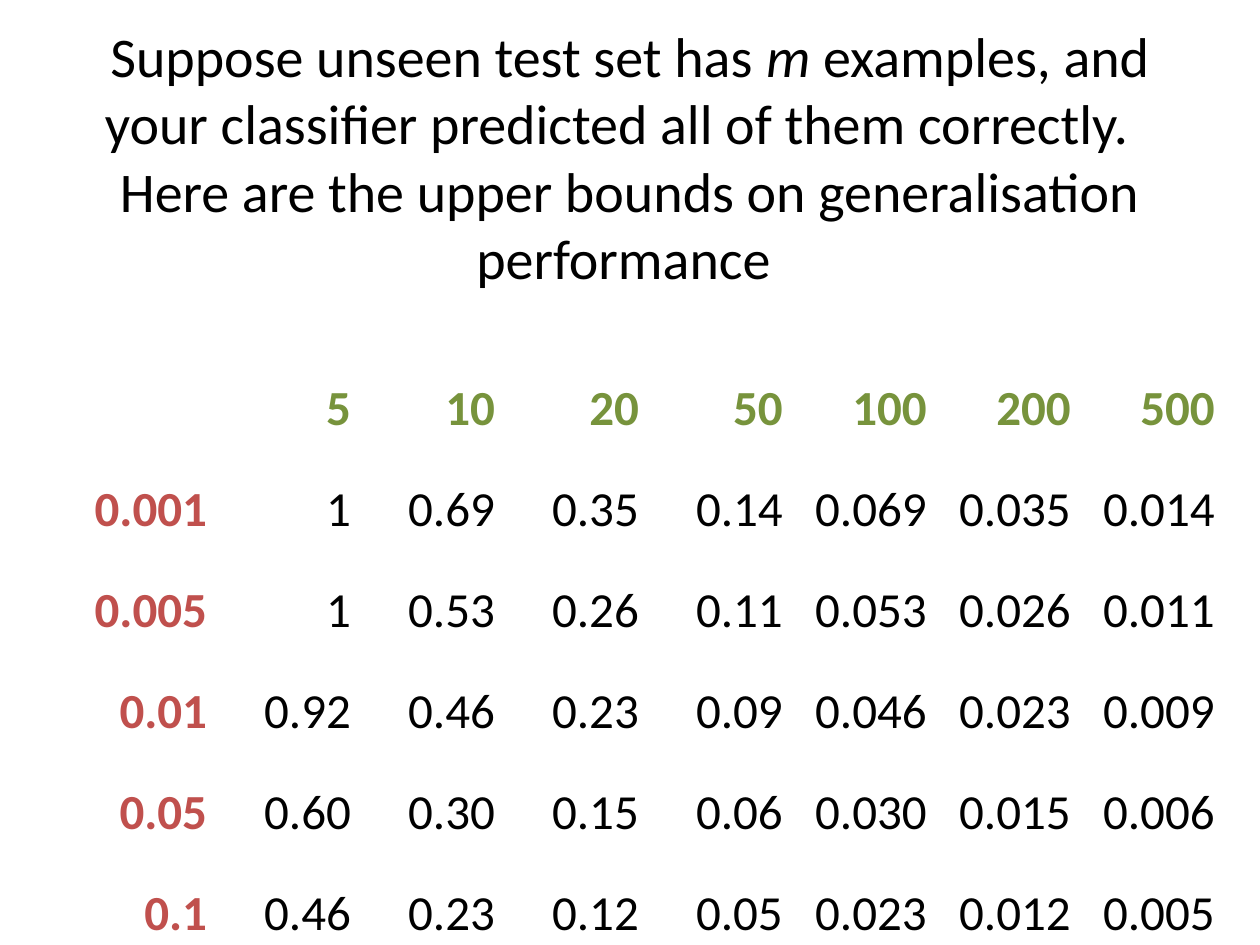
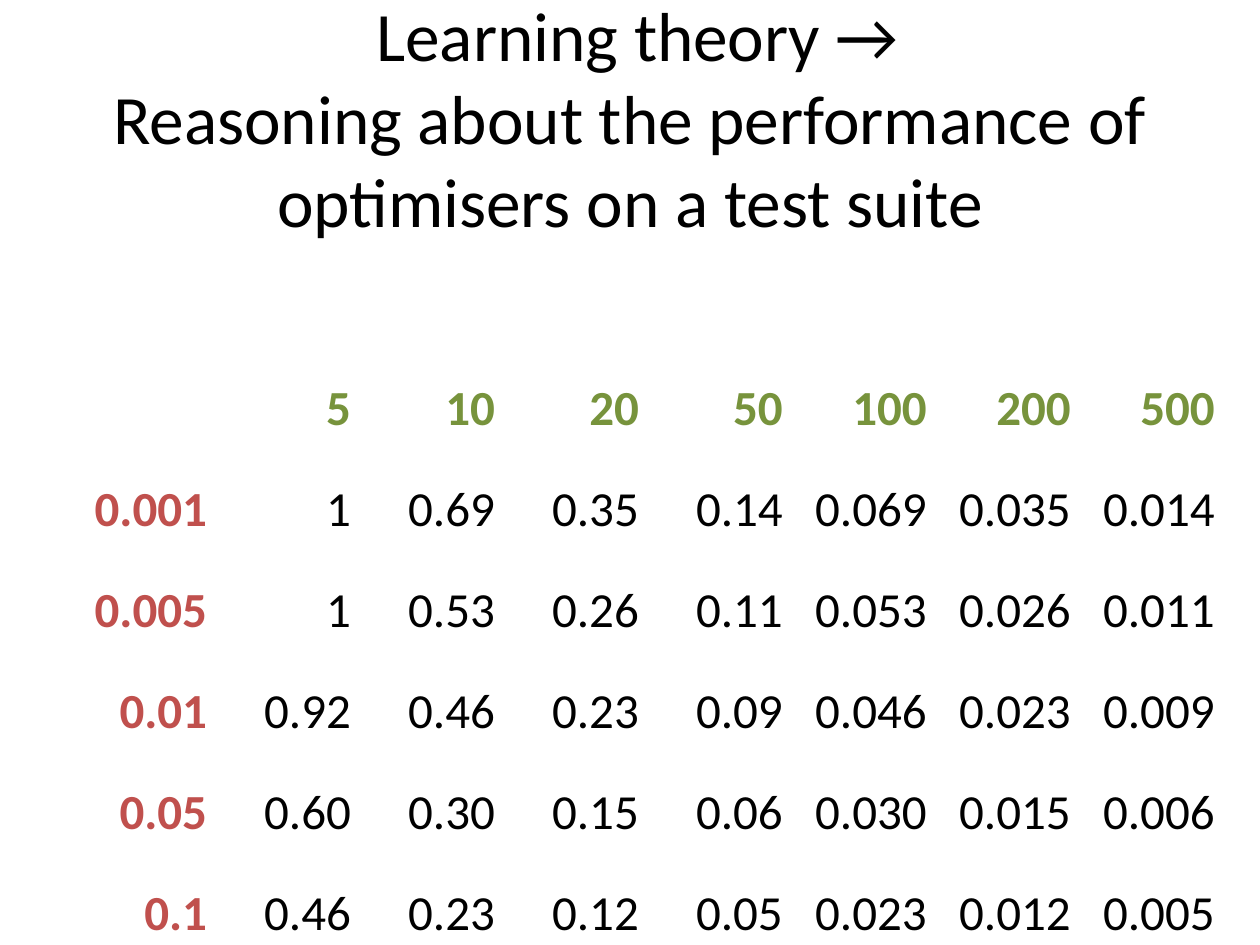
"""Build two slides that show one table of performance bounds under different titles."""
import pptx
import pptx.dml.color
import pptx.enum.text
import pptx.util

PX = 914400 // 126
FONT = "Calibri"
COLOURS = {"text": "000000", "size": "77933C", "risk": "C0504D"}
PAGES = [
    {
        "top": 77,
        "points": 32,
        "lines": [
            [("Suppose unseen test set has ", False), ("m", True),
             (" examples, and your classifier predicted all of them correctly.  ", False)],
            [("Here are the upper bounds on generalisation performance ", False)],
        ],
    },
    {
        "top": 38,
        "points": 39.6,
        "lines": [
            [(" Learning theory →", False)],
            [("Reasoning about the performance of optimisers on a test suite", False)],
        ],
    },
]
BOUNDS = [
    ["", "5", "10", "20", "50", "100", "200", "500"],
    ["0.001", "1", "0.69", "0.35", "0.14", "0.069", "0.035", "0.014"],
    ["0.005", "1", "0.53", "0.26", "0.11", "0.053", "0.026", "0.011"],
    ["0.01", "0.92", "0.46", "0.23", "0.09", "0.046", "0.023", "0.009"],
    ["0.05", "0.60", "0.30", "0.15", "0.06", "0.030", "0.015", "0.006"],
    ["0.1", "0.46", "0.23", "0.12", "0.05", "0.023", "0.012", "0.005"],
]
TITLE_LEFT, TITLE_WIDTH, TITLE_HEIGHT = 63, 1134, 158
TABLE_LEFT, TABLE_TOP = 64, 344
COLUMN_WIDTH, HEADER_HEIGHT, ROW_HEIGHT = 144, 95, 101
CELL_MARGIN = 1


def px(*lengths):
    return [pptx.util.Emu(length * PX) for length in lengths]


def style(paragraph, points, colour, align, bold=False):
    paragraph.alignment = align
    font = paragraph.font
    font.name, font.size, font.bold = FONT, pptx.util.Pt(points), bold
    font.color.rgb = pptx.dml.color.RGBColor.from_string(COLOURS[colour])


def add_title(slide, top, points, lines):
    box = slide.shapes.add_textbox(*px(TITLE_LEFT, top, TITLE_WIDTH, TITLE_HEIGHT))
    frame = box.text_frame
    frame.word_wrap = True
    frame.vertical_anchor = pptx.enum.text.MSO_ANCHOR.MIDDLE
    para = frame.paragraphs[0]
    style(para, points, "text", pptx.enum.text.PP_ALIGN.CENTER)
    for number, line in enumerate(lines):
        if number:
            para.add_line_break()
        for words, italic in line:
            span = para.add_run()
            span.text = words
            if italic:
                span.font.italic = True


def add_bounds(slide):
    rows, columns = len(BOUNDS), len(BOUNDS[0])
    heights = [HEADER_HEIGHT] + [ROW_HEIGHT] * (rows - 1)
    place = px(TABLE_LEFT, TABLE_TOP, COLUMN_WIDTH * columns, sum(heights))
    table = slide.shapes.add_table(rows, columns, *place).table
    table.first_row = table.horz_banding = False
    for row, height in zip(table.rows, px(*heights)):
        row.height = height
    for column in table.columns:
        column.width = px(COLUMN_WIDTH)[0]
    for r, values in enumerate(BOUNDS):
        for c, value in enumerate(values):
            cell = table.cell(r, c)
            cell.fill.background()
            cell.vertical_anchor = pptx.enum.text.MSO_ANCHOR.BOTTOM
            cell.margin_left = cell.margin_right = cell.margin_top = px(CELL_MARGIN)[0]
            cell.margin_bottom = 0
            cell.text = value
            colour = "size" if r == 0 else "risk" if c == 0 else "text"
            style(cell.text_frame.paragraphs[0], 28, colour,
                  pptx.enum.text.PP_ALIGN.RIGHT, bold=colour != "text")


def main():
    deck = pptx.Presentation()
    deck.slide_width, deck.slide_height = px(1260, 945)
    for page in PAGES:
        slide = deck.slides.add_slide(deck.slide_layouts[6])
        add_title(slide, **page)
        add_bounds(slide)
    deck.save("out.pptx")


if __name__ == "__main__":
    main()
